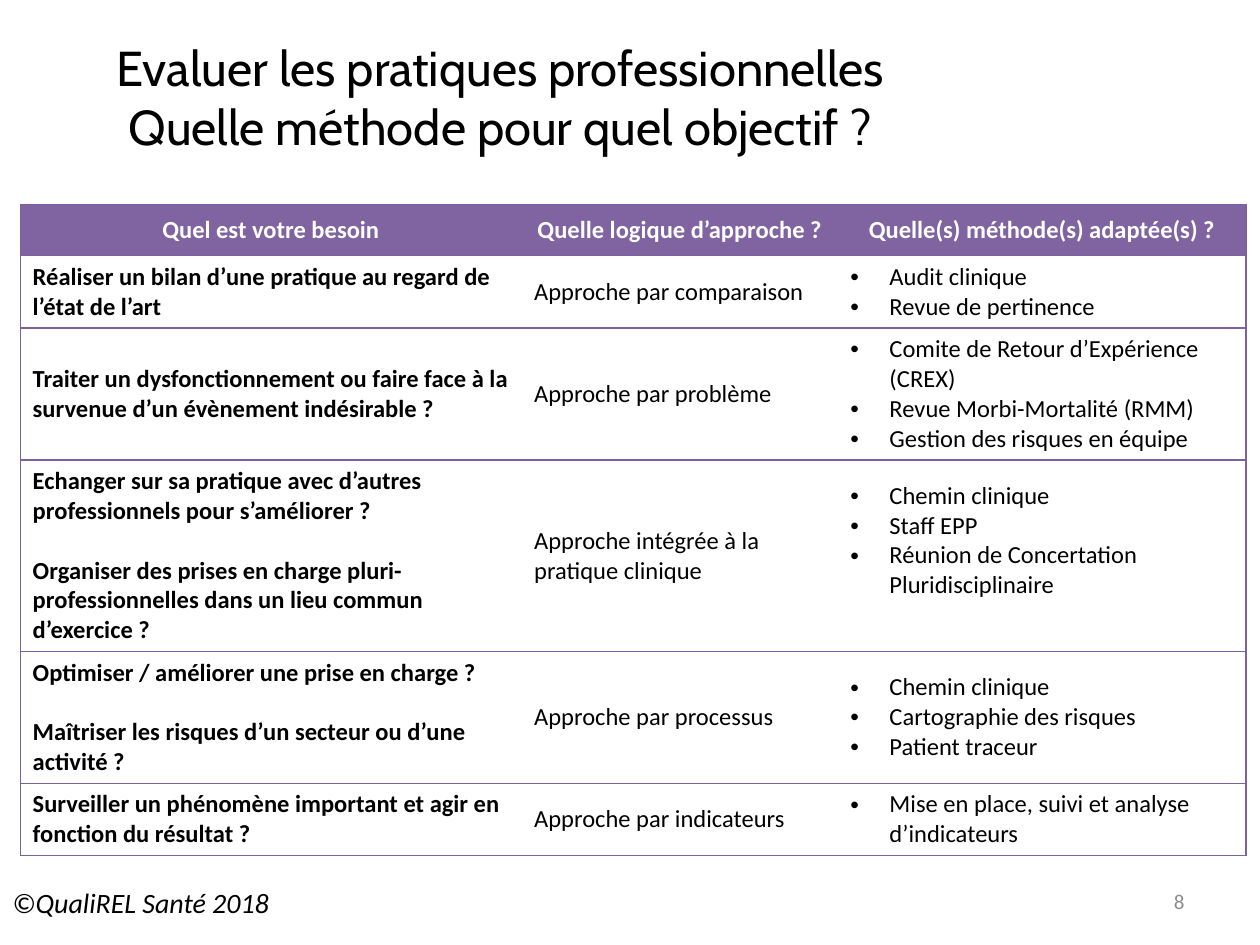
import dataclasses

import lxml.etree
import pptx
import pptx.dml.color
import pptx.enum.text
import pptx.oxml
import pptx.oxml.ns
import pptx.util

Inches = pptx.util.Inches
Pt = pptx.util.Pt
Align = pptx.enum.text.PP_ALIGN
Anchor = pptx.enum.text.MSO_ANCHOR
qn = pptx.oxml.ns.qn


@dataclasses.dataclass(frozen=True)
class Theme:
    """Hold the colours, fonts and type sizes."""
    head: str = "8064A2"
    rule: str = "7D60A0"
    ink: str = "000000"
    paper: str = "FFFFFF"
    mute: str = "8C8C8C"
    body: str = "Calibri"
    display: str = "Cabin"
    title: int = 28
    foot: int = 16
    cell: int = 14
    page: int = 12


THEME = Theme()
COLS = [3.98, 2.51, 3.24]
ROWS = [0.41, 0.57, 1.04, 1.52, 1.04, 0.57]
HEADS = [
    "Quel est votre besoin",
    "Quelle logique d’approche ?",
    "Quelle(s) méthode(s) adaptée(s) ?",
]
NEEDS = [
    (["Réaliser un bilan d’une pratique au regard de l’état de l’art"],
     "Approche par comparaison",
     ["Audit clinique", "Revue de pertinence"]),
    (["Traiter un dysfonctionnement ou faire face à la survenue d’un évènement indésirable ?"],
     "Approche par problème",
     ["Comite de Retour d’Expérience (CREX)", "Revue Morbi-Mortalité (RMM)",
      "Gestion des risques en équipe"]),
    (["Echanger sur sa pratique avec d’autres professionnels pour s’améliorer ?",
      "Organiser des prises en charge pluri-professionnelles dans un lieu commun d’exercice ?"],
     "Approche intégrée à la pratique clinique",
     ["Chemin clinique", "Staff EPP", "Réunion de Concertation Pluridisciplinaire"]),
    (["Optimiser / améliorer une prise en charge ?",
      "Maîtriser les risques d’un secteur ou d’une activité ?"],
     "Approche par processus",
     ["Chemin clinique", "Cartographie des risques", "Patient traceur"]),
    (["Surveiller un phénomène important et agir en fonction du résultat ?"],
     "Approche par indicateurs",
     ["Mise en place, suivi et analyse d’indicateurs"]),
]


def color(code):
    """Turn a hex code into a colour."""
    return pptx.dml.color.RGBColor.from_string(code)


def bullet(para):
    """Give a paragraph a hanging round bullet."""
    props = para._p.get_or_add_pPr()
    props.set("marL", str(Inches(0.31)))
    props.set("indent", str(-Inches(0.31)))
    lxml.etree.SubElement(props, qn("a:buFont")).set("typeface", "Arial")
    lxml.etree.SubElement(props, qn("a:buChar")).set("char", "•")


def write(frame, lines, size=THEME.cell, face=THEME.body, ink=THEME.ink, bold=False,
          italic=False, align=Align.LEFT, dots=False, gap=0):
    """Fill a text frame with one paragraph per line."""
    frame.word_wrap = True
    for index, line in enumerate(lines):
        para = frame.add_paragraph() if index else frame.paragraphs[0]
        para.text = line
        para.alignment = align
        if index and gap:
            para.space_before = Pt(gap)
        if dots:
            bullet(para)
        for run in para.runs:
            font = run.font
            font.size, font.name = Pt(size), face
            font.bold, font.italic = bold, italic
            font.color.rgb = color(ink)


def label(slide, text, left, top, width, height, anchor=Anchor.TOP, **look):
    """Add a text box."""
    box = slide.shapes.add_textbox(Inches(left), Inches(top), Inches(width), Inches(height))
    box.text_frame.vertical_anchor = anchor
    write(box.text_frame, [text], **look)


def edge(cell, sides):
    """Rule the named sides of a cell and clear the others."""
    props = cell._tc.get_or_add_tcPr()
    for index, side in enumerate("LRTB"):
        line = pptx.oxml.parse_xml(
            f'<a:ln{side} {pptx.oxml.ns.nsdecls("a")} w="{Pt(0.75)}"/>')
        if side in sides:
            fill = lxml.etree.SubElement(line, qn("a:solidFill"))
            lxml.etree.SubElement(fill, qn("a:srgbClr")).set("val", THEME.rule)
        else:
            lxml.etree.SubElement(line, qn("a:noFill"))
        props.insert(index, line)


def style(cell, fill, sides):
    """Set the fill, anchor and rules of a cell."""
    cell.vertical_anchor = Anchor.MIDDLE
    cell.fill.solid()
    cell.fill.fore_color.rgb = color(fill)
    edge(cell, sides)


def grid(slide):
    """Add the table of needs, approaches and methods."""
    table = slide.shapes.add_table(
        len(ROWS), len(COLS), Inches(0.16), Inches(1.62),
        Inches(sum(COLS)), Inches(sum(ROWS))).table
    table.first_row = table.horz_banding = False
    for col, width in zip(table.columns, COLS):
        col.width = Inches(width)
    for row, height in zip(table.rows, ROWS):
        row.height = Inches(height)
    for r in range(len(ROWS)):
        for c, sides in enumerate(["LTB", "TB", "RTB"]):
            style(table.cell(r, c), THEME.paper if r else THEME.head, sides)
    for c, text in enumerate(HEADS):
        write(table.cell(0, c).text_frame, [text], ink=THEME.paper, bold=True,
              align=Align.CENTER)
    for r, (need, way, tools) in enumerate(NEEDS, 1):
        write(table.cell(r, 0).text_frame, need, bold=True, gap=17)
        write(table.cell(r, 1).text_frame, [way])
        write(table.cell(r, 2).text_frame, tools, dots=True)
    table.cell(3, 2).margin_bottom = Inches(0.29)


def head(slide):
    """Place and fill the title."""
    title = slide.shapes.title
    title.left, title.top = Inches(0.26), Inches(0.14)
    title.width, title.height = Inches(7.42), Inches(1.25)
    frame = title.text_frame
    frame.auto_size = pptx.enum.text.MSO_AUTO_SIZE.NONE
    frame.vertical_anchor = Anchor.MIDDLE
    write(frame, ["Evaluer les pratiques professionnelles\vQuelle méthode pour quel objectif ?"],
          size=THEME.title, face=THEME.display, align=Align.CENTER)


def main():
    """Build and save the slide."""
    deck = pptx.Presentation()
    deck.slide_width, deck.slide_height = Inches(10), Inches(7.5)
    slide = deck.slides.add_slide(deck.slide_layouts[5])
    head(slide)
    grid(slide)
    label(slide, "©QualiREL Santé 2018", 0, 6.98, 2.95, 0.37, size=THEME.foot, italic=True)
    label(slide, "8", 7.17, 6.95, 2.33, 0.4, anchor=Anchor.MIDDLE, size=THEME.page,
          ink=THEME.mute, align=Align.RIGHT)
    deck.save("out.pptx")


if __name__ == "__main__":
    main()
